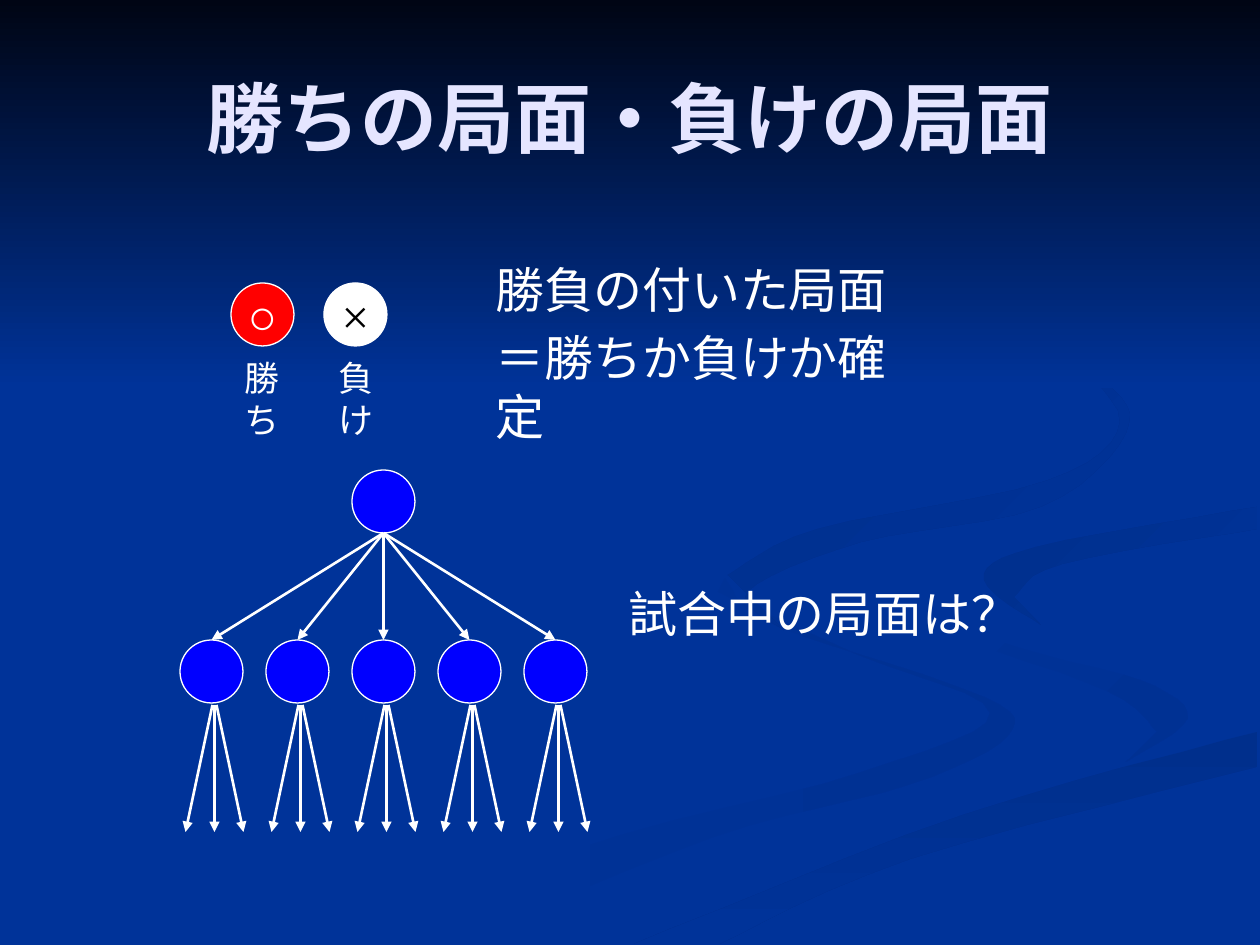
from pptx import Presentation
from pptx.dml.color import RGBColor
from pptx.enum.shapes import MSO_CONNECTOR, MSO_SHAPE
from pptx.enum.text import MSO_ANCHOR, MSO_AUTO_SIZE, PP_ALIGN
from pptx.oxml.ns import qn
from pptx.util import Pt
from lxml import etree

PX = 914400 / 126
OVAL, RECTANGLE = MSO_SHAPE.OVAL, MSO_SHAPE.RECTANGLE
STRAIGHT = MSO_CONNECTOR.STRAIGHT
LEFT, CENTER = PP_ALIGN.LEFT, PP_ALIGN.CENTER
TOP, MIDDLE = MSO_ANCHOR.TOP, MSO_ANCHOR.MIDDLE
GROW = MSO_AUTO_SIZE.SHAPE_TO_FIT_TEXT

FONT = "Times New Roman"
NAVY = RGBColor(0x00, 0x33, 0x99)
NIGHT = RGBColor(0x00, 0x05, 0x14)
SHADE = RGBColor(0x00, 0x31, 0x93)
SHADE_DARK = RGBColor(0x00, 0x2F, 0x8C)
LAVENDER = RGBColor(0xE5, 0xE5, 0xFF)
WHITE = RGBColor(0xFF, 0xFF, 0xFF)
BLACK = RGBColor(0x00, 0x00, 0x00)
RED = RGBColor(0xFF, 0x00, 0x00)
BLUE = RGBColor(0x00, 0x00, 0xFF)

DIAMETER = 63
ROOT_LEFT, ROOT_TOP = 352, 470
CHILD_TOP, CHILD_STEP = 640, 86
FAN_TOP, FAN_BOTTOM = 705, 832

# Decorative ribbons: first colour, last colour, clockwise angle, two edges
RIBBONS = [
    (NAVY, SHADE, 0,
     [(725, 578), (774, 625), (984, 697), (1007, 737), (908, 785), (711, 838), (455, 944)],
     [(378, 944), (577, 849), (862, 772), (990, 713), (856, 654), (718, 592)]),
    (NAVY, SHADE, 45,
     [(912, 585), (998, 641), (1140, 680), (1188, 718), (1126, 762)],
     [(1157, 732), (1109, 692), (951, 636)]),
    (SHADE_DARK, NAVY, 90,
     [(1257, 732), (963, 815), (634, 944)],
     [(719, 944), (910, 859), (1257, 767)]),
    (SHADE_DARK, NAVY, 45,
     [(1257, 507), (1036, 547), (984, 580), (1041, 625)],
     [(1014, 597), (1062, 564), (1257, 529)]),
    (SHADE_DARK, NAVY, 45,
     [(960, 294), (1100, 377), (1126, 433), (1040, 507), (861, 542), (747, 592), (784, 630)],
     [(728, 575), (818, 529), (1046, 481), (1120, 422), (1066, 352)]),
]


def px(*lengths):
    return [round(length * PX) for length in lengths]


def smooth_edge(knots, steps=6):
    """Points of a Catmull-Rom curve through the knots."""
    padded = [knots[0], *knots, knots[-1]]
    curve = []
    for quad in zip(padded, padded[1:], padded[2:], padded[3:]):
        for step in range(steps):
            t = step / steps
            curve.append(tuple(
                b + t * (c - a) / 2
                + t ** 2 * (2 * a - 5 * b + 4 * c - d) / 2
                + t ** 3 * (3 * b - a - 3 * c + d) / 2
                for a, b, c, d in zip(*quad)))
    return curve + [knots[-1]]


def paint_gradient(shape, first, last, angle):
    shape.shadow.inherit = False
    shape.line.fill.background()
    shape.fill.gradient()
    shape.fill.gradient_angle = (360 - angle) % 360
    for stop, color in zip(shape.fill.gradient_stops, (first, last)):
        stop.color.rgb = color


def add_backdrop(slide):
    slide.background.fill.solid()
    slide.background.fill.fore_color.rgb = NAVY
    for first, last, angle, outer, inner in RIBBONS:
        outline = smooth_edge(outer) + smooth_edge(inner)
        builder = slide.shapes.build_freeform(*outline[0], scale=PX)
        builder.add_line_segments(outline[1:], close=True)
        paint_gradient(builder.convert_to_shape(), first, last, angle)
    night_sky = slide.shapes.add_shape(RECTANGLE, *px(0, 0, 1260, 388))
    paint_gradient(night_sky, NIGHT, NAVY, 90)


def write(shape, text, size=28, color=WHITE, bold=False, align=CENTER,
          anchor=TOP, wrap=False, spacing=0.2):
    frame = shape.text_frame
    frame.word_wrap = wrap
    frame.vertical_anchor = anchor
    frame.text = text
    for paragraph in frame.paragraphs:
        paragraph.alignment = align
        paragraph.space_before = Pt(size * spacing)
        for run in paragraph.runs:
            run.font.name = FONT
            run.font.size = Pt(size)
            run.font.bold = bold
            run.font.color.rgb = color


def add_label(slide, box, text, **text_format):
    label = slide.shapes.add_textbox(*px(*box))
    write(label, text, **text_format)
    label.text_frame.auto_size = GROW


def add_position(slide, left, top, fill):
    """Circle that stands for one position of the game."""
    position = slide.shapes.add_shape(OVAL, *px(left, top, DIAMETER, DIAMETER))
    position.shadow.inherit = False
    position.fill.solid()
    position.fill.fore_color.rgb = fill
    position.line.color.rgb = WHITE
    position.line.width = Pt(0.75)
    return position


def add_move(slide, start, end):
    """Arrow from a position to the next one."""
    move = slide.shapes.add_connector(STRAIGHT, *px(*start, *end))
    move.line.color.rgb = WHITE
    move.line.width = Pt(1.5)
    properties = move._element.spPr
    etree.SubElement(properties.find(qn("a:ln")), qn("a:tailEnd"), type="triangle")
    etree.SubElement(properties, qn("a:effectLst"))


def add_game_tree(slide):
    add_position(slide, ROOT_LEFT, ROOT_TOP, BLUE)
    root_center = ROOT_LEFT + DIAMETER / 2
    for column in range(-2, 3):
        offset = column * CHILD_STEP
        center = root_center + offset
        add_position(slide, ROOT_LEFT + offset, CHILD_TOP, BLUE)
        add_move(slide, (root_center, ROOT_TOP + DIAMETER), (center, CHILD_TOP))
        fan = center + 3
        for side in (-1, 0, 1):
            add_move(slide, (fan + 2 * side, FAN_TOP), (fan + 29 * side, FAN_BOTTOM))


def main():
    prs = Presentation()
    prs.slide_width, prs.slide_height = px(1260, 945)
    slide = prs.slides.add_slide(prs.slide_layouts[6])
    add_backdrop(slide)

    title = slide.shapes.add_textbox(*px(63, 38, 1134, 157))
    write(title, "勝ちの局面・負けの局面", size=44, color=LAVENDER, bold=True,
          anchor=MIDDLE, wrap=True, spacing=0)

    win = add_position(slide, 231, 283, RED)
    write(win, "○", anchor=MIDDLE)
    loss = add_position(slide, 324, 283, WHITE)
    write(loss, "×", color=BLACK, anchor=MIDDLE)
    add_label(slide, (217, 350, 91, 55), "勝ち", size=20)
    add_label(slide, (309, 350, 94, 55), "負け", size=20)
    add_label(slide, (483, 253, 461, 144), "勝負の付いた局面\n＝勝ちか負けか確定", align=LEFT)

    add_game_tree(slide)
    add_label(slide, (614, 577, 421, 72), "試合中の局面は？")
    prs.save("out.pptx")


if __name__ == "__main__":
    main()
